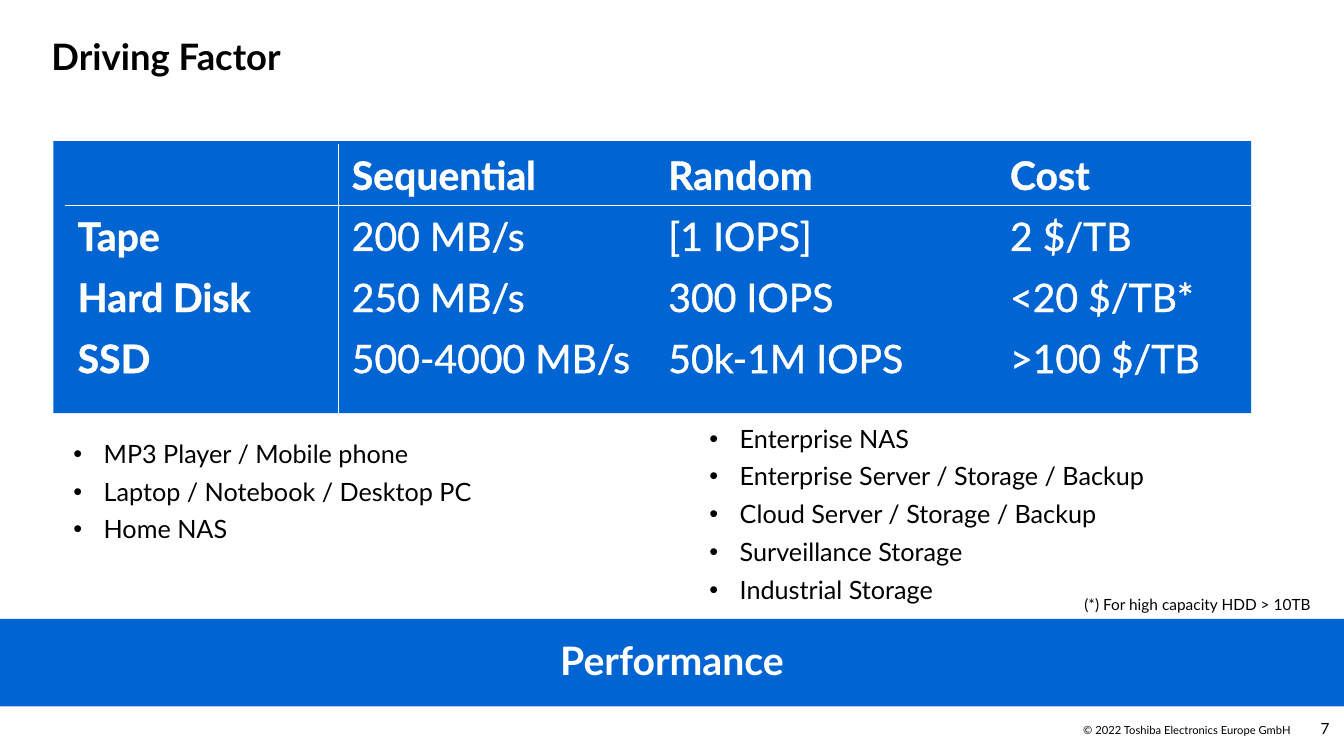
"""Build the Driving Factor slide comparing tape, hard disk and SSD."""
from dataclasses import dataclass
from typing import Any

import lxml.etree
import pptx
import pptx.dml.color
import pptx.enum.shapes
import pptx.enum.text
import pptx.oxml.ns
import pptx.util

Pt = pptx.util.Pt
ALIGN = pptx.enum.text.PP_ALIGN
ANCHOR = pptx.enum.text.MSO_ANCHOR
qn = pptx.oxml.ns.qn

FONT = "Lato"
BLUE, WHITE, BLACK = "0064D2", "FFFFFF", "000000"
INSETS = (7.2, 3.6, 7.2, 3.6)
COLUMN_WIDTHS = (195.8, 226.1, 244.1, 202.3)
ROW_HEIGHTS = (43.2, 42.5, 42.5, 74.9)
COMPARISON = (
    ("", "Sequential", "Random", "Cost"),
    ("Tape", "200 MB/s", "[1 IOPS]", "2 $/TB"),
    ("Hard Disk", "250 MB/s", "300 IOPS", "<20 $/TB*"),
    ("SSD", "500-4000 MB/s", "50k-1M IOPS", ">100 $/TB"),
)


@dataclass
class Box:
    """Hold a rectangle's position and size in points."""
    left: float
    top: float
    width: float
    height: float

    def lengths(self) -> tuple:
        """Return the four lengths as slide units."""
        return Pt(self.left), Pt(self.top), Pt(self.width), Pt(self.height)


@dataclass
class TextBlock:
    """Describe one free-standing text and its format."""
    box: Box
    lines: tuple
    style: dict


TEXTS = (
    TextBlock(Box(767.5, 517, 154.8, 9.4), ("© 2022 Toshiba Electronics Europe GmbH",),
              dict(size=8, align=ALIGN.RIGHT, anchor=ANCHOR.MIDDLE, insets=(0, 0, 0, 0), wrap=False)),
    TextBlock(Box(916.6, 506.2, 33.1, 28.8), ("7",),
              dict(size=11, align=ALIGN.RIGHT, anchor=ANCHOR.MIDDLE, insets=(0, 0, 0, 0))),
    TextBlock(Box(0, 0, 901.4, 59), ("Driving Factor",),
              dict(size=26, bold=True, anchor=ANCHOR.BOTTOM, insets=(36.7, 3.6, 0, 3.6))),
    TextBlock(Box(499.7, 301, 420, 140),
              ("Enterprise NAS", "Enterprise Server / Storage / Backup",
               "Cloud Server / Storage / Backup", "Surveillance Storage", "Industrial Storage"),
              dict(size=18, bullets=True)),
    TextBlock(Box(45.4, 311.8, 448.6, 129),
              ("MP3 Player / Mobile phone", "Laptop / Notebook / Desktop PC", "Home NAS"),
              dict(size=18, bullets=True)),
    TextBlock(Box(767.5, 421.2, 177.1, 20.9), ("(*) For high capacity HDD > 10TB",),
              dict(size=11, wrap=False)),
)


def rgb(value: str) -> pptx.dml.color.RGBColor:
    """Turn a hex string into a colour."""
    return pptx.dml.color.RGBColor.from_string(value)


def add_bullet(paragraph: Any) -> None:
    """Give a paragraph a round bullet and a hanging indent."""
    properties = paragraph._p.get_or_add_pPr()
    properties.set("marL", str(Pt(21.6)))
    properties.set("indent", str(-Pt(21.6)))
    lxml.etree.SubElement(properties, qn("a:buFont")).set("typeface", "Arial")
    lxml.etree.SubElement(properties, qn("a:buChar")).set("char", "•")


def line_xml(parent: Any, tag: str, width: float, color: str | None) -> None:
    """Append a solid or empty line definition."""
    line = lxml.etree.SubElement(parent, qn(tag))
    line.set("w", str(Pt(width)))
    if color is None:
        lxml.etree.SubElement(line, qn("a:noFill"))
    else:
        solid = lxml.etree.SubElement(line, qn("a:solidFill"))
        lxml.etree.SubElement(solid, qn("a:srgbClr")).set("val", color)


def write(frame: Any, lines: tuple, *, size: float, color: str = BLACK, bold: bool = False,
          align: Any = ALIGN.LEFT, anchor: Any = ANCHOR.TOP, insets: tuple = INSETS,
          wrap: bool = True, bullets: bool = False, spacing: float = 1.0,
          outline: str | None = None) -> None:
    """Fill a text frame with formatted paragraphs."""
    frame.word_wrap = wrap
    frame.vertical_anchor = anchor
    frame.margin_left, frame.margin_top, frame.margin_right, frame.margin_bottom = map(Pt, insets)
    for index, line in enumerate(lines):
        paragraph = frame.add_paragraph() if index else frame.paragraphs[0]
        if bullets:
            add_bullet(paragraph)
        paragraph.alignment = align
        paragraph.line_spacing = 0.9 if bullets else spacing
        if index:
            paragraph.space_before = Pt(7.5)
        run = paragraph.add_run()
        run.text = line
        if outline:
            line_xml(run._r.get_or_add_rPr(), "a:ln", 0.75, outline)
        run.font.name = FONT
        run.font.size = Pt(size)
        run.font.bold = bold
        run.font.color.rgb = rgb(color)


def add_panel(slide: Any, box: Box) -> Any:
    """Add a plain blue rectangle."""
    panel = slide.shapes.add_shape(pptx.enum.shapes.MSO_SHAPE.RECTANGLE, *box.lengths())
    panel.shadow.inherit = False
    panel.fill.solid()
    panel.fill.fore_color.rgb = rgb(BLUE)
    panel.line.fill.background()
    return panel


def add_comparison(slide: Any) -> None:
    """Add the table with rules below its header and beside its first column."""
    box = Box(46.1, 103, sum(COLUMN_WIDTHS), sum(ROW_HEIGHTS))
    table = slide.shapes.add_table(len(ROW_HEIGHTS), len(COLUMN_WIDTHS), *box.lengths()).table
    table.first_row = table.horz_banding = False
    for column, width in zip(table.columns, COLUMN_WIDTHS):
        column.width = Pt(width)
    for r, (row, height, values) in enumerate(zip(table.rows, ROW_HEIGHTS, COMPARISON)):
        row.height = Pt(height)
        for c, (cell, value) in enumerate(zip(row.cells, values)):
            write(cell.text_frame, (value,), size=28, color=WHITE, bold=r == 0 or c == 0,
                  outline=WHITE)
            cell.margin_left = cell.margin_right = Pt(9.4)
            cell.margin_top = cell.margin_bottom = Pt(5)
            ruled = {"a:lnL": c == 1, "a:lnR": c == 0, "a:lnT": r == 1, "a:lnB": r == 0}
            for side, shown in ruled.items():
                line_xml(cell._tc.get_or_add_tcPr(), side, 1, WHITE if shown else None)
            cell.fill.background()


def main() -> None:
    """Build and save the presentation."""
    deck = pptx.Presentation()
    deck.slide_width, deck.slide_height = Pt(960), Pt(540)
    slide = deck.slides.add_slide(deck.slide_layouts[6])
    add_panel(slide, Box(38.2, 100.8, 855.4, 194.4))
    performance = add_panel(slide, Box(0, 442.1, 960, 62.6))
    write(performance.text_frame, ("Performance",), size=28, color=WHITE, bold=True,
          align=ALIGN.CENTER, anchor=ANCHOR.MIDDLE, spacing=0.9)
    add_comparison(slide)
    for block in TEXTS:
        frame = slide.shapes.add_textbox(*block.box.lengths()).text_frame
        write(frame, block.lines, **block.style)
    deck.save("out.pptx")


if __name__ == "__main__":
    main()
